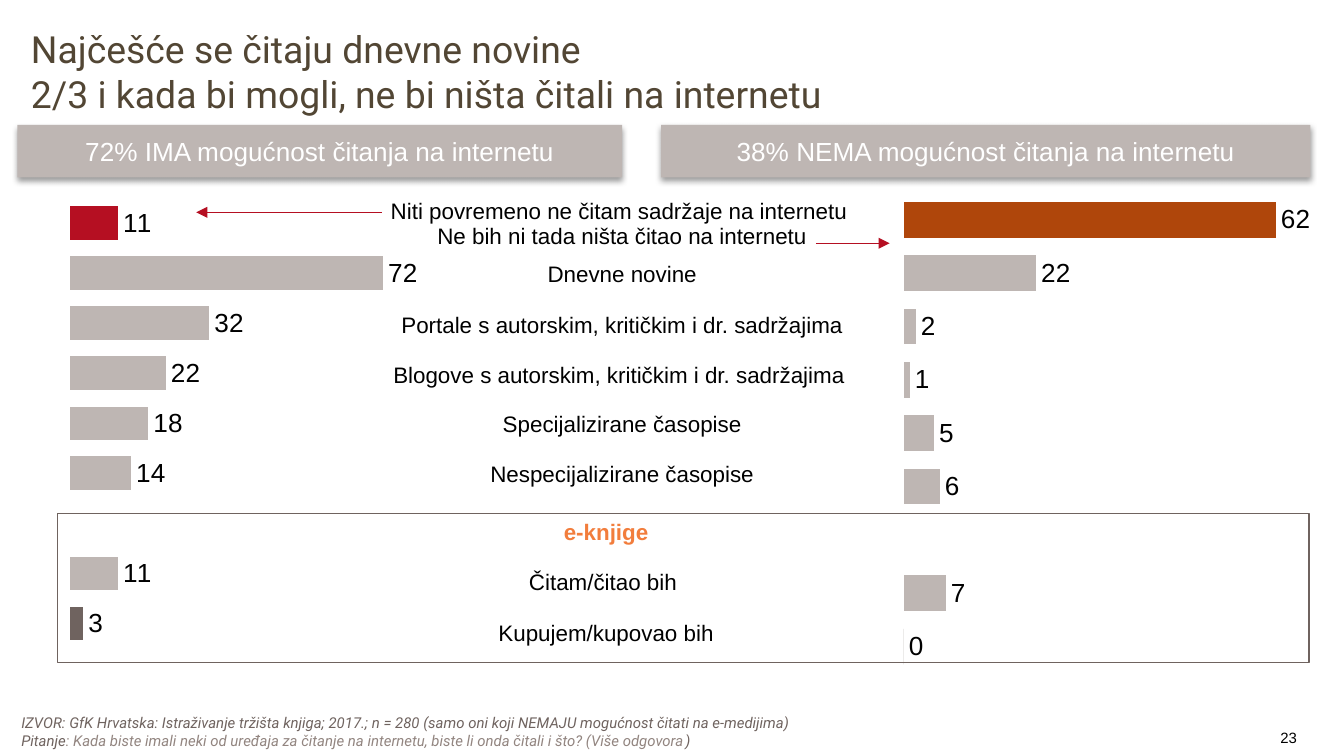
from lxml import etree
from pptx import Presentation
from pptx.chart.data import CategoryChartData
from pptx.dml.color import RGBColor
from pptx.enum.chart import XL_CHART_TYPE, XL_LABEL_POSITION
from pptx.enum.shapes import MSO_CONNECTOR, MSO_SHAPE
from pptx.enum.text import MSO_ANCHOR, MSO_AUTO_SIZE, PP_ALIGN
from pptx.oxml import parse_xml
from pptx.oxml.ns import nsdecls, qn
from pptx.util import Inches, Pt

BLACK = RGBColor(0x00, 0x00, 0x00)
WHITE = RGBColor(0xFF, 0xFF, 0xFF)
OLIVE = RGBColor(0x52, 0x46, 0x34)
TAUPE = RGBColor(0x6F, 0x63, 0x5F)
LIGHT_TAUPE = RGBColor(0x92, 0x85, 0x80)
STONE = RGBColor(0xBE, 0xB6, 0xB3)
RED = RGBColor(0xB5, 0x0F, 0x22)
RUST = RGBColor(0xAF, 0x46, 0x0B)
ORANGE = RGBColor(0xF2, 0x7D, 0x3C)
NO_TABLE_STYLE = "{2D5ABB26-0587-4C30-8999-92F81FD0307C}"

# Content: every paragraph is a list of (text, colour) runs
TITLE = [
    [("Najčešće se čitaju dnevne novine ", OLIVE)],
    [("2/3 i kada bi mogli, ne bi ništa čitali na internetu", OLIVE)],
]
SOURCE = [
    [("IZVOR: GfK Hrvatska: Istraživanje tržišta knjiga; 2017.; n = 280 "
      "(samo oni koji NEMAJU mogućnost čitati na e-medijima)", TAUPE)],
    [("Pitanje", TAUPE),
     (": Kada biste imali neki od uređaja za čitanje na internetu, "
      "biste li onda čitali i što? (Više odgovora", LIGHT_TAUPE),
     (")", TAUPE)],
]
PAGE_NUMBER = [[("23", BLACK)]]
HEADERS = [
    ("72% IMA mogućnost čitanja na internetu", 0.13, 4.5),
    ("38% NEMA mogućnost čitanja na internetu", 4.92, 4.83),
]
CHARTS = [
    {"values": [11, 72, 32, 22, 18, 14, None, 11, 3], "first": RED, "max": 80,
     "box": (0.43, 1.3, 2.68, 3.79), "plot": (0.034, 0.046, 0.966, 0.884)},
    {"values": [62, 22, 2, 1, 5, 6, None, 7, 0], "first": RUST, "max": 70,
     "box": (6.67, 1.32, 3.18, 3.79), "plot": (0.017, 0.031, 0.983, 0.943)},
]
READING_ROWS = [
    [[("Niti povremeno ne čitam sadržaje na internetu ", BLACK)],
     [("Ne bih ni tada ništa čitao na internetu", BLACK)]],
    [[("Dnevne novine", BLACK)]],
    [[("Portale s autorskim, kritičkim i dr. sadržajima", BLACK)]],
    [[("Blogove s autorskim, kritičkim i dr. sadržajima ", BLACK)]],
    [[("Specijalizirane časopise", BLACK)]],
    [[("Nespecijalizirane časopise", BLACK)]],
]
EBOOK_ROWS = [
    [[("e-knjige", ORANGE)]],
    [[("Čitam/čitao bih ", BLACK)]],
    [[("Kupujem/kupovao bih", BLACK)]],
]
ARROWS = [((2.84, 1.58), (1.46, 1.58)), ((6.07, 1.81), (6.62, 1.81))]


def write(frame, paragraphs, size, font, align, bold=False, italic=False):
    for i, runs in enumerate(paragraphs):
        paragraph = frame.paragraphs[0] if i == 0 else frame.add_paragraph()
        paragraph.alignment = align
        for text, color in runs:
            run = paragraph.add_run()
            run.text = text
            run.font.size = Pt(size)
            run.font.name = font
            run.font.bold = bold
            run.font.italic = italic
            run.font.color.rgb = color


def add_text(slide, box, paragraphs, size, font, align, italic=False, inset=0.1):
    frame = slide.shapes.add_textbox(*map(Inches, box)).text_frame
    frame.word_wrap = True
    frame.vertical_anchor = MSO_ANCHOR.MIDDLE
    frame.margin_left = frame.margin_right = Inches(inset)
    frame.margin_top = frame.margin_bottom = Inches(inset / 2)
    write(frame, paragraphs, size, font, align, italic=italic)


def add_bars(slide, spec):
    data = CategoryChartData(number_format="#,##0")
    data.categories = [str(n + 1) for n in range(len(spec["values"]))]
    data.add_series("Series 1", spec["values"])
    chart = slide.shapes.add_chart(
        XL_CHART_TYPE.BAR_CLUSTERED, *map(Inches, spec["box"]), data).chart
    chart.has_legend = chart.has_title = False
    chart.font.size, chart.font.name = Pt(12), "Arial"
    chart.font.color.rgb = BLACK
    chart.category_axis.reverse_order = True
    chart.value_axis.minimum_scale = 0
    chart.value_axis.maximum_scale = spec["max"]
    chart.value_axis.has_major_gridlines = False
    chart.category_axis.visible = chart.value_axis.visible = False

    plot = chart.plots[0]
    plot.gap_width = 50
    plot.vary_by_categories = False
    series = plot.series[0]
    series.invert_if_negative = False
    series.format.fill.solid()
    series.format.fill.fore_color.rgb = STONE
    for index, color in ((0, spec["first"]), (8, TAUPE)):
        fill = series.points[index].format.fill
        fill.solid()
        fill.fore_color.rgb = color
    labels = series.data_labels
    labels.show_value = True
    labels.position = XL_LABEL_POSITION.OUTSIDE_END
    labels.number_format, labels.number_format_is_linked = "#,##0", False
    labels.font.size, labels.font.name = Pt(14), "Arial"
    labels.font.color.rgb = BLACK

    # Fixed inner plot area
    area = chart.element.find(".//" + qn("c:plotArea"))
    for old in area.findall(qn("c:layout")):
        area.remove(old)
    places = "".join(f'<c:{k} val="{v}"/>' for k, v in zip("xywh", spec["plot"]))
    area.insert(0, parse_xml(
        f'<c:layout {nsdecls("c")}><c:manualLayout><c:layoutTarget val="inner"/>'
        f'<c:xMode val="edge"/><c:yMode val="edge"/>{places}'
        f'</c:manualLayout></c:layout>'))


def add_labels(slide, left, top, rows, bold_first=False):
    table = slide.shapes.add_table(
        len(rows), 1, Inches(left), Inches(top), Inches(4.22),
        Inches(0.37 * len(rows))).table
    table.first_row = table.horz_banding = False
    table._tbl.tblPr.find(qn("a:tableStyleId")).text = NO_TABLE_STYLE
    for i, paragraphs in enumerate(rows):
        table.rows[i].height = Inches(0.38 if i == 1 else 0.37)
        cell = table.cell(i, 0)
        cell.fill.background()
        cell.margin_bottom = Inches(0.02)
        write(cell.text_frame, paragraphs, 12, "Arial", PP_ALIGN.CENTER,
              bold=bold_first and i == 0)


def add_header(slide, text, left, width):
    bar = slide.shapes.add_shape(MSO_SHAPE.RECTANGLE, Inches(left), Inches(0.93),
                                 Inches(width), Inches(0.39))
    bar.fill.solid()
    bar.fill.fore_color.rgb = STONE
    bar.line.fill.background()
    bar._element.spPr.append(parse_xml(
        f'<a:effectLst {nsdecls("a")}><a:outerShdw blurRad="{Pt(3.1)}" '
        f'dist="{Pt(1.6)}" dir="5400000" rotWithShape="0"><a:srgbClr val="000000">'
        f'<a:alpha val="38000"/></a:srgbClr></a:outerShdw></a:effectLst>'))
    bar.text_frame.vertical_anchor = MSO_ANCHOR.MIDDLE
    write(bar.text_frame, [[(text, WHITE)]], 14, "Arial", PP_ALIGN.CENTER)


def add_arrow(slide, start, end):
    arrow = slide.shapes.add_connector(
        MSO_CONNECTOR.STRAIGHT, *map(Inches, start + end))
    arrow.line.color.rgb = RED
    arrow.line.width = Pt(0.75)
    etree.SubElement(arrow.line._get_or_add_ln(), qn("a:tailEnd"), type="triangle")
    etree.SubElement(arrow._element.spPr, qn("a:effectLst"))


def main():
    # Widescreen slide, 16:9
    prs = Presentation()
    prs.slide_width = Inches(10)
    prs.slide_height = Inches(10 * 9 / 16)
    slide = prs.slides.add_slide(prs.slide_layouts[5])

    # Title
    title = slide.shapes.title
    title.left, title.top, title.width, title.height = map(
        Inches, (0.13, 0.25, 8.82, 0.56))
    title.text_frame.auto_size = MSO_AUTO_SIZE.NONE
    title.text_frame.vertical_anchor = MSO_ANCHOR.MIDDLE
    write(title.text_frame, TITLE, 20, "Roboto", PP_ALIGN.JUSTIFY)

    # Bar charts
    for spec in CHARTS:
        add_bars(slide, spec)

    # Source and page number
    add_text(slide, (8.23, 5.41, 1.42, 0.16), PAGE_NUMBER, 8, "Arial",
             PP_ALIGN.RIGHT, inset=0)
    add_text(slide, (0.06, 5.33, 9.51, 0.22), SOURCE, 8, "Roboto",
             PP_ALIGN.JUSTIFY, italic=True)

    # Frame around the e-book rows
    frame = slide.shapes.add_shape(MSO_SHAPE.RECTANGLE, *map(
        Inches, (0.43, 3.82, 9.31, 1.11)))
    frame.shadow.inherit = False
    frame.fill.background()
    frame.line.color.rgb = TAUPE
    frame.line.width = Pt(0.75)

    # Headers, row labels and arrows
    for header in HEADERS:
        add_header(slide, *header)
    add_labels(slide, 2.52, 1.43, READING_ROWS)
    add_labels(slide, 2.4, 3.82, EBOOK_ROWS, bold_first=True)
    for start, end in ARROWS:
        add_arrow(slide, start, end)

    prs.save("out.pptx")


if __name__ == "__main__":
    main()
